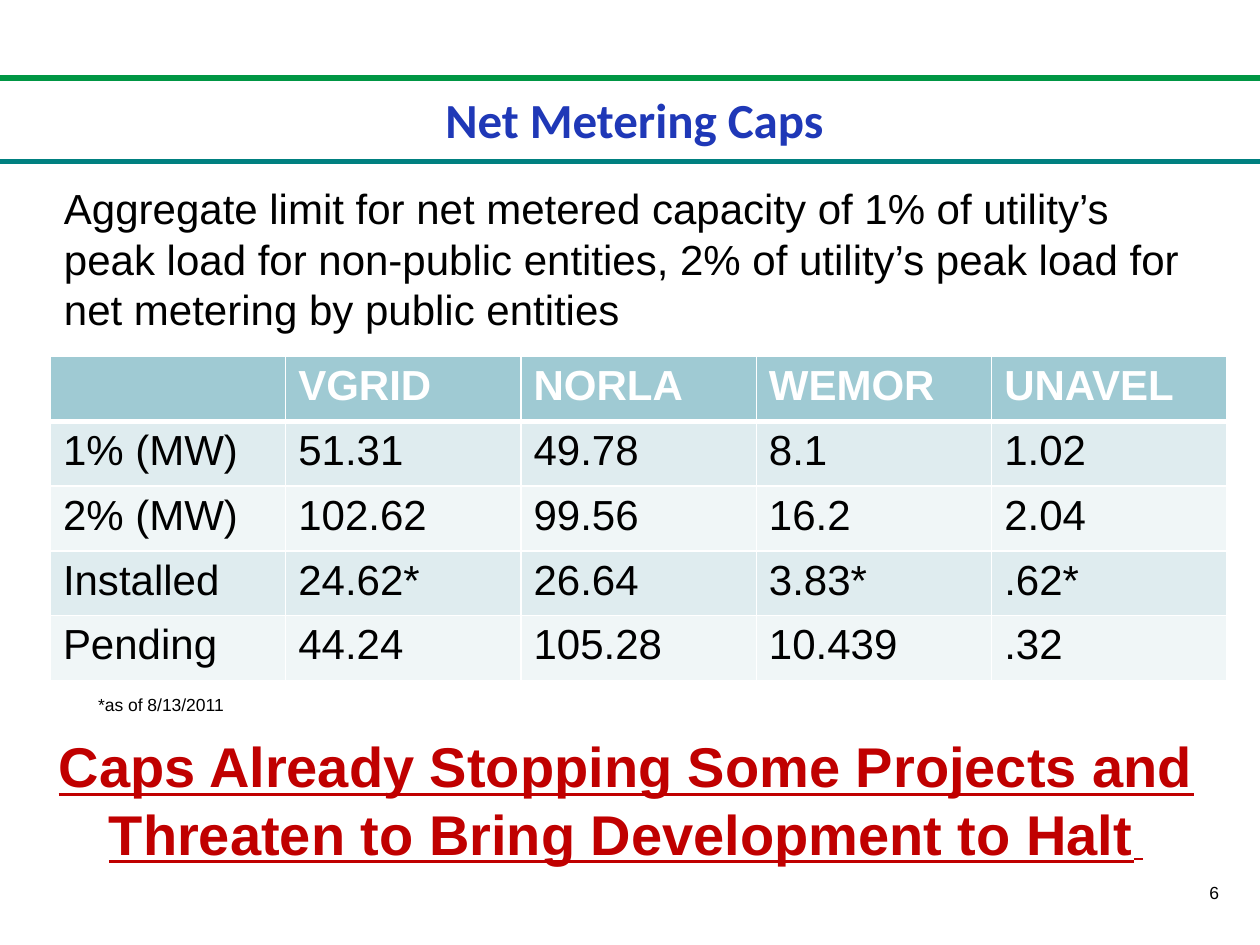
from collections import namedtuple
from dataclasses import dataclass

from lxml import etree
from pptx import Presentation
from pptx.dml.color import RGBColor
from pptx.enum import shapes, text
from pptx.oxml import ns
from pptx.util import Inches, Pt

COLUMNS, ROWS = 100, 75
WIDTH, HEIGHT = Inches(10), Inches(7.5)
Box = namedtuple("Box", "left top width height")


@dataclass(frozen=True)
class Theme:
    body_font: str = "Arial"
    title_font: str = "Calibri"
    ink: str = "000000"
    white: str = "FFFFFF"
    title: str = "1F38B7"
    alert: str = "C00000"
    rule_top: str = "009644"
    rule_bottom: str = "008080"
    header: str = "9FCAD3"
    bands: tuple = ("DFECEF", "F0F6F7")
    title_size: int = 28
    body_size: int = 24
    alert_size: int = 32
    alert_end_size: int = 20
    small_size: int = 10
    rule_width: int = 3
    border_width: int = 1
    header_border_width: int = 3


THEME = Theme()

CAPS = [
    ["", "VGRID", "NORLA", "WEMOR", "UNAVEL"],
    ["1% (MW)", "51.31", "49.78", "8.1", "1.02"],
    ["2% (MW)", "102.62", "99.56", "16.2", "2.04"],
    ["Installed", "24.62*", "26.64", "3.83*", ".62*"],
    ["Pending", "44.24", "105.28", "10.439", ".32"],
]


def grid(left, top, width, height):
    return Box(
        round(WIDTH * left / COLUMNS),
        round(HEIGHT * top / ROWS),
        round(WIDTH * width / COLUMNS),
        round(HEIGHT * height / ROWS),
    )


def style_font(font, color, **values):
    settings = {"name": THEME.body_font, "bold": False, **values}
    settings["size"] = Pt(settings["size"])
    for name, value in settings.items():
        setattr(font, name, value)
    font.color.rgb = RGBColor.from_string(color)


def add_text(slide, box, runs, align=text.PP_ALIGN.LEFT, wrap=True):
    frame = slide.shapes.add_textbox(*box).text_frame
    frame.word_wrap = wrap
    paragraph = frame.paragraphs[0]
    paragraph.alignment = align
    for words, values in runs:
        run = paragraph.add_run()
        run.text = words
        style_font(run.font, **values)


def add_rule(slide, box, color):
    left, top, width, height = box
    rule = slide.shapes.add_connector(
        shapes.MSO_CONNECTOR.STRAIGHT, left, top, left + width, top + height
    )
    rule.line.color.rgb = RGBColor.from_string(color)
    rule.line.width = Pt(THEME.rule_width)
    etree.SubElement(rule._element.spPr, ns.qn("a:effectLst"))


def add_title_band(slide, box):
    add_rule(slide, box._replace(height=0), THEME.rule_top)
    add_rule(slide, box._replace(top=box.top + box.height, height=0), THEME.rule_bottom)
    values = {"color": THEME.title, "size": THEME.title_size,
              "name": THEME.title_font, "bold": True}
    title_box = Box(
        round(box.width * 0.05),
        box.top + round(box.height * 0.06),
        round(box.width * 0.907),
        round(box.height * 0.86),
    )
    add_text(slide, title_box, [("Net Metering Caps", values)], text.PP_ALIGN.CENTER)


def add_summary(slide, box):
    words = (
        "Aggregate limit for net metered capacity of 1% of utility’s peak load "
        "for non-public entities, 2% of utility’s peak load for net metering "
        "by public entities"
    )
    add_text(slide, box, [(words, {"color": THEME.ink, "size": THEME.body_size})])


def set_borders(cell, widths):
    properties = cell._tc.get_or_add_tcPr()
    for position, (side, width) in enumerate(widths.items()):
        line = etree.Element(ns.qn(f"a:{side}"), w=str(Pt(width)))
        fill = etree.SubElement(line, ns.qn("a:solidFill"))
        etree.SubElement(fill, ns.qn("a:srgbClr"), val=THEME.white)
        properties.insert(position, line)


def add_caps_table(slide, box):
    table = slide.shapes.add_table(len(CAPS), len(CAPS[0]), *box).table
    for column in table.columns:
        column.width = box.width // len(CAPS[0])
    for row in table.rows:
        row.height = box.height // len(CAPS)
    for row_index, values in enumerate(CAPS):
        is_header = row_index == 0
        fill = THEME.header if is_header else THEME.bands[(row_index - 1) % 2]
        color = THEME.white if is_header else THEME.ink
        widths = dict.fromkeys(("lnL", "lnR", "lnT", "lnB"), THEME.border_width)
        if is_header:
            widths["lnB"] = THEME.header_border_width
        elif row_index == 1:
            widths["lnT"] = THEME.header_border_width
        for column_index, value in enumerate(values):
            cell = table.cell(row_index, column_index)
            cell.text = value
            cell.fill.solid()
            cell.fill.fore_color.rgb = RGBColor.from_string(fill)
            style_font(cell.text_frame.paragraphs[0].font, color,
                       size=THEME.body_size, bold=is_header)
            set_borders(cell, widths)


def add_small_text(slide, box, words, wrap):
    values = {"color": THEME.ink, "size": THEME.small_size}
    add_text(slide, box, [(words, values)], wrap=wrap)


def add_warning(slide, box):
    values = {"color": THEME.alert, "size": THEME.alert_size,
              "bold": True, "underline": True}
    words = "Caps Already Stopping Some Projects and Threaten to Bring Development to Halt"
    runs = [(words, values), (" ", {**values, "size": THEME.alert_end_size})]
    add_text(slide, box, runs, text.PP_ALIGN.CENTER)


def main():
    presentation = Presentation()
    presentation.slide_width, presentation.slide_height = WIDTH, HEIGHT
    slide = presentation.slides.add_slide(presentation.slide_layouts[6])
    add_title_band(slide, grid(0, 6.2, 100, 6.6))
    add_summary(slide, grid(4.1, 14, 91.3, 13.1))
    add_small_text(slide, grid(95, 69.5, 5, 5.5), "6", True)
    add_caps_table(slide, grid(4, 28.3, 93.4, 25.7))
    add_small_text(slide, grid(6.8, 54.6, 12.1, 2.7), "*as of 8/13/2011", False)
    add_warning(slide, grid(3.3, 57.6, 92.8, 14.8))
    presentation.save("out.pptx")


if __name__ == "__main__":
    main()
